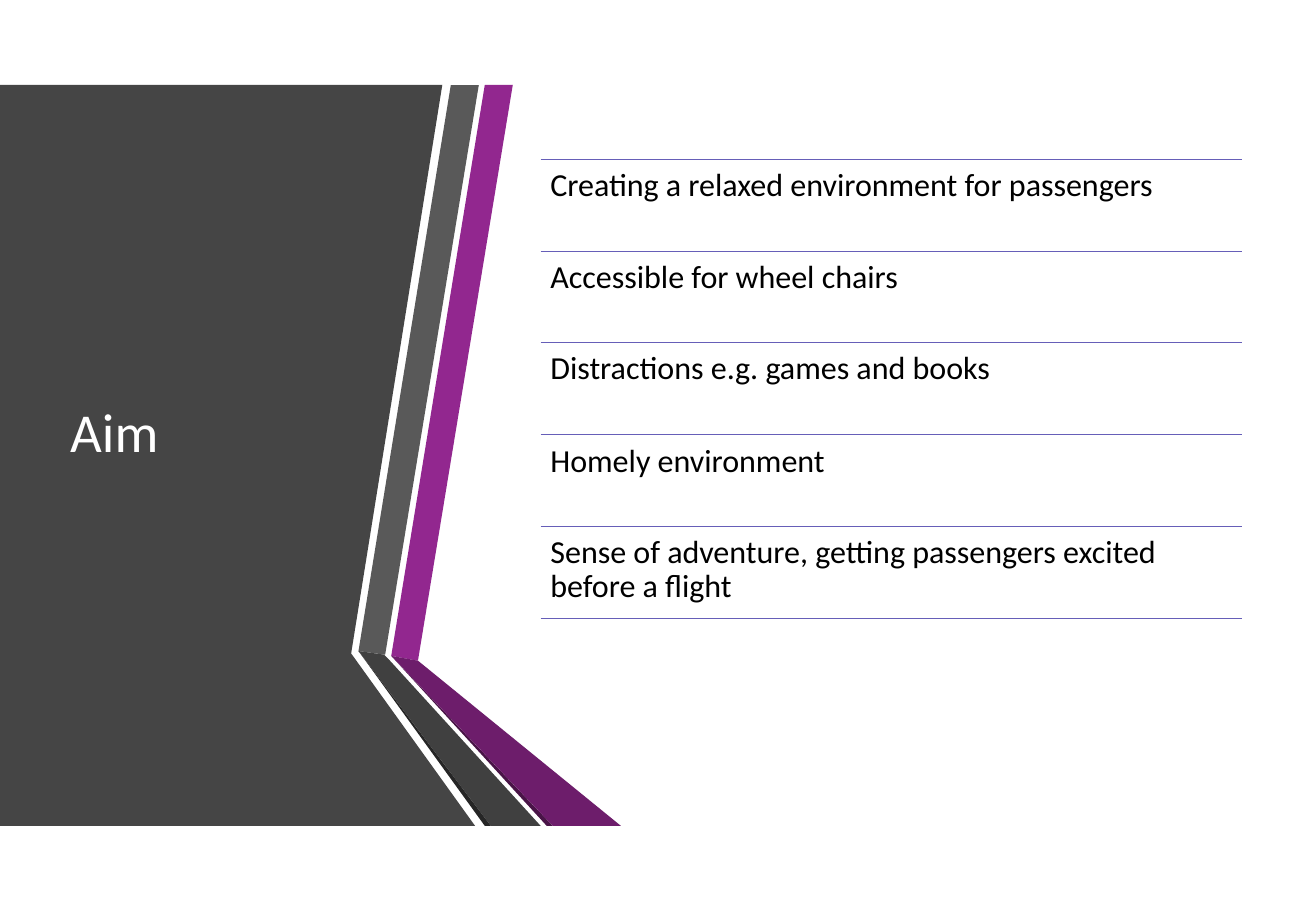
"""Build the Aim slide: a folded ribbon panel beside a ruled list of goals."""
from dataclasses import dataclass

import pptx
import pptx.dml.color
import pptx.enum.shapes
import pptx.enum.text
import pptx.oxml
import pptx.shapes.autoshape
import pptx.slide
import pptx.util

PX = 9144
SLIDE_WIDTH, SLIDE_HEIGHT = 1083, 750
FONT = "Calibri"

WHITE = pptx.dml.color.RGBColor(0xFF, 0xFF, 0xFF)
BLACK = pptx.dml.color.RGBColor(0x00, 0x00, 0x00)
PANEL_GRAY = pptx.dml.color.RGBColor(0x45, 0x45, 0x45)
RIBBON_GRAY = pptx.dml.color.RGBColor(0x59, 0x59, 0x59)
FOLD_GRAY = pptx.dml.color.RGBColor(0x40, 0x40, 0x40)
EDGE_GRAY = pptx.dml.color.RGBColor(0x26, 0x26, 0x26)
RIBBON_PURPLE = pptx.dml.color.RGBColor(0x92, 0x27, 0x8F)
FOLD_PURPLE = pptx.dml.color.RGBColor(0x6D, 0x1D, 0x6B)
EDGE_PURPLE = pptx.dml.color.RGBColor(0x49, 0x14, 0x47)
RULE_VIOLET = pptx.dml.color.RGBColor(0x66, 0x5E, 0xB8)

TOP, BOTTOM = 70, 680
LIST_LEFT, LIST_TOP, LIST_WIDTH, LIST_HEIGHT = 445, 131, 577, 378


@dataclass(frozen=True)
class Polygon:
    """A filled outline given by its corners in px."""

    color: pptx.dml.color.RGBColor
    points: tuple[tuple[int, int], ...]


@dataclass(frozen=True)
class Box:
    """A rectangle in px."""

    left: int
    top: int
    width: int
    height: int


POLYGONS = (
    Polygon(PANEL_GRAY, ((0, TOP), (364, TOP), (289, 538), (391, BOTTOM), (0, BOTTOM))),
    Polygon(RIBBON_PURPLE, ((322, 540), (344, 544), (422, TOP), (399, TOP))),
    Polygon(RIBBON_GRAY, ((394, TOP), (371, TOP), (295, 536), (317, 539))),
    Polygon(EDGE_GRAY, ((295, 536), (399, BOTTOM), (404, BOTTOM))),
    Polygon(EDGE_PURPLE, ((322, 540), (450, BOTTOM), (455, BOTTOM))),
    Polygon(FOLD_PURPLE, ((322, 540), (455, BOTTOM), (511, BOTTOM), (344, 544))),
    Polygon(FOLD_GRAY, ((445, BOTTOM), (321, 544), (316, 539), (295, 536), (404, BOTTOM))),
)

GOALS = (
    "Creating a relaxed environment for passengers",
    "Accessible for wheel chairs",
    "Distractions e.g. games and books",
    "Homely environment",
    "Sense of adventure, getting passengers excited before a flight",
)


def px(length: int) -> pptx.util.Emu:
    """Turn px into EMU."""
    return pptx.util.Emu(length * PX)


def draw_polygon(slide: pptx.slide.Slide, polygon: Polygon) -> None:
    """Draw one filled outline without a border."""
    builder = slide.shapes.build_freeform(*polygon.points[0], scale=PX)
    builder.add_line_segments(polygon.points[1:], close=True)
    shape = builder.convert_to_shape()
    shape.shadow.inherit = False
    shape.fill.solid()
    shape.fill.fore_color.rgb = polygon.color
    shape.line.fill.background()


def draw_text(
    slide: pptx.slide.Slide,
    text: str,
    box: Box,
    *,
    size: float,
    color: pptx.dml.color.RGBColor,
    anchor: pptx.enum.text.MSO_ANCHOR = pptx.enum.text.MSO_ANCHOR.TOP,
    margins: tuple[int, int] = (8, 8),
) -> None:
    """Draw a wrapped text box with horizontal and vertical margins."""
    shape = slide.shapes.add_textbox(
        px(box.left), px(box.top), px(box.width), px(box.height)
    )
    frame = shape.text_frame
    frame.word_wrap = True
    frame.vertical_anchor = anchor
    frame.margin_left = frame.margin_right = px(margins[0])
    frame.margin_top = frame.margin_bottom = px(margins[1])
    paragraph = frame.paragraphs[0]
    paragraph.line_spacing = 0.9
    run = paragraph.add_run()
    run.text = text
    run.font.name = FONT
    run.font.size = pptx.util.Pt(size)
    run.font.color.rgb = color


def draw_rule(slide: pptx.slide.Slide, top: int) -> None:
    """Draw a thin horizontal rule across the list."""
    connector = slide.shapes.add_connector(
        pptx.enum.shapes.MSO_CONNECTOR.STRAIGHT,
        px(LIST_LEFT), px(top), px(LIST_LEFT + LIST_WIDTH), px(top),
    )
    connector.line.color.rgb = RULE_VIOLET
    connector.line.width = pptx.util.Pt(0.5)
    effects = pptx.oxml.parse_xml(
        '<a:effectLst xmlns:a="http://schemas.openxmlformats.org/drawingml/2006/main"/>'
    )
    connector.element.spPr.append(effects)


def main() -> None:
    """Build and save the presentation."""
    presentation = pptx.Presentation()
    presentation.slide_width = px(SLIDE_WIDTH)
    presentation.slide_height = px(SLIDE_HEIGHT)
    slide = presentation.slides.add_slide(presentation.slide_layouts[6])

    for polygon in POLYGONS:
        draw_polygon(slide, polygon)
    draw_text(
        slide, "Aim", Box(48, 131, 247, 454), size=32.5, color=WHITE,
        anchor=pptx.enum.text.MSO_ANCHOR.MIDDLE, margins=(10, 5),
    )

    row_tops = [
        LIST_TOP + round(LIST_HEIGHT * row / len(GOALS))
        for row in range(len(GOALS) + 1)
    ]
    for top in row_tops:
        draw_rule(slide, top)
    for goal, top, bottom in zip(GOALS, row_tops, row_tops[1:]):
        box = Box(LIST_LEFT, top, LIST_WIDTH, bottom - top)
        draw_text(slide, goal, box, size=19, color=BLACK)

    presentation.save("out.pptx")


if __name__ == "__main__":
    main()
